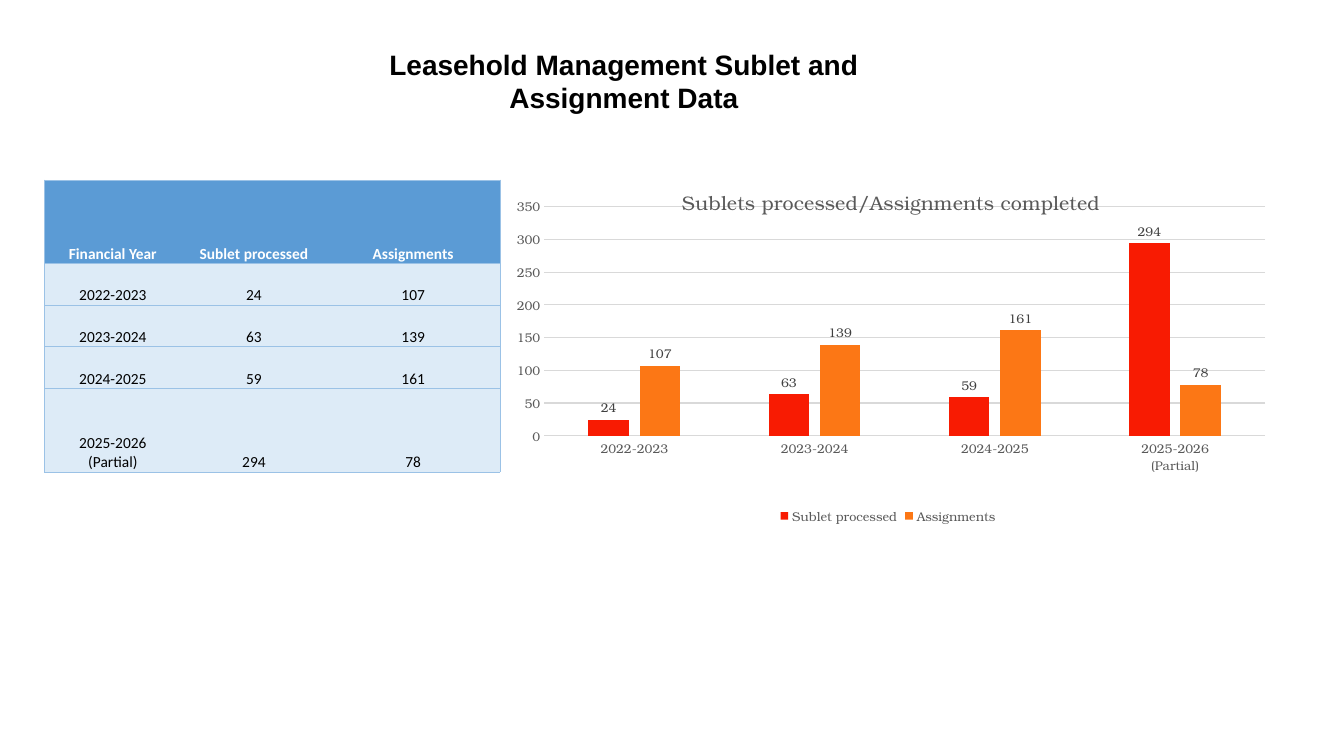
from pptx import Presentation
from pptx.util import Pt
from pptx.dml.color import RGBColor
from pptx.enum.text import PP_ALIGN, MSO_ANCHOR, MSO_AUTO_SIZE
from pptx.enum.chart import XL_CHART_TYPE, XL_LEGEND_POSITION, XL_TICK_MARK, XL_LABEL_POSITION
from pptx.chart.data import CategoryChartData
from pptx.oxml import parse_xml
from pptx.oxml.ns import nsdecls

HUES = {"black": "000000", "white": "FFFFFF", "head": "5B9BD5", "body": "DDEBF7",
        "edge": "9BC2E6", "grid": "D9D9D9", "grey": "595959", "label": "404040",
        "red": "F81B02", "orange": "FC7715"}
FACE = "TeX Gyre Bonum"
YEARS = ["2022-2023", "2023-2024", "2024-2025", "2025-2026\n(Partial)"]
SERIES = [("Sublet processed", [24, 63, 59, 294], "red"),
          ("Assignments", [107, 139, 161, 78], "orange")]


def style(font, name, size, hue, bold=False):
    font.name, font.size, font.bold = name, Pt(size), bold
    font.color.rgb = RGBColor.from_string(HUES[hue])


def layout(x, y, w=None, h=None):
    size = f'<c:w val="{w}"/><c:h val="{h}"/>' if w else ""
    target = '<c:layoutTarget val="inner"/>' if w else ""
    return parse_xml(f'<c:layout {nsdecls("c")}><c:manualLayout>{target}'
                     '<c:xMode val="edge"/><c:yMode val="edge"/>'
                     f'<c:x val="{x}"/><c:y val="{y}"/>{size}'
                     '</c:manualLayout></c:layout>')


deck = Presentation()
deck.slide_width, deck.slide_height = Pt(960), Pt(540)
slide = deck.slides.add_slide(deck.slide_layouts[5])

# Title
title = slide.shapes.title
title.left, title.top, title.width, title.height = Pt(227.5), Pt(30.2), Pt(436.3), Pt(77.8)
frame = title.text_frame
frame.text = "Leasehold Management Sublet and Assignment Data"
frame.word_wrap = True
frame.auto_size = MSO_AUTO_SIZE.NONE
frame.vertical_anchor = MSO_ANCHOR.TOP
frame.paragraphs[0].alignment = PP_ALIGN.CENTER
style(frame.paragraphs[0].runs[0].font, "Arial", 20, "black", True)

# Table
rows = [["Financial Year"] + [name for name, _, _ in SERIES]]
rows += [list(row) for row in zip(YEARS, *(vals for _, vals, _ in SERIES))]
widths = [97.9, 103.7, 123.8]
heights = [59.6, 29.8, 29.8, 29.8, 59.6]
table = slide.shapes.add_table(len(rows), len(widths), Pt(31.7), Pt(128.5),
                               Pt(sum(widths)), Pt(sum(heights))).table
table.horz_banding = False
for col, width in zip(table.columns, widths):
    col.width = Pt(width)
for r, row in enumerate(rows):
    table.rows[r].height = Pt(heights[r])
    for c, value in enumerate(row):
        cell = table.cell(r, c)
        cell.text = str(value).replace("\n", "\v")
        cell.vertical_anchor = MSO_ANCHOR.BOTTOM
        cell.margin_left = cell.margin_right = cell.margin_top = Pt(0.7)
        cell.margin_bottom = 0
        para = cell.text_frame.paragraphs[0]
        para.alignment = PP_ALIGN.CENTER
        for run in para.runs:
            style(run.font, "Calibri", 11, "black" if r else "white", r == 0)
        # Outer frame and row rules only
        shown = {"L": c == 0, "R": c == len(widths) - 1, "T": True, "B": True}
        for side, on in shown.items():
            paint = (f'<a:solidFill><a:srgbClr val="{HUES["edge"]}"/></a:solidFill>'
                     if on else "<a:noFill/>")
            cell._tc.get_or_add_tcPr().append(parse_xml(
                f'<a:ln{side} {nsdecls("a")} w="{Pt(0.5)}">{paint}</a:ln{side}>'))
        cell.fill.solid()
        cell.fill.fore_color.rgb = RGBColor.from_string(HUES["body" if r else "head"])

# Chart
data = CategoryChartData(number_format="0")
data.categories = YEARS
for name, vals, _ in SERIES:
    data.add_series(name, vals)
chart = slide.shapes.add_chart(XL_CHART_TYPE.COLUMN_CLUSTERED, Pt(357.1), Pt(119.5),
                               Pt(554.4), Pt(257.8), data).chart
style(chart.font, FACE, 10, "black")

# Chart title and plot area
chart.has_title = True
head = chart.chart_title
head.text_frame.text = "Sublets processed/Assignments completed"
style(head.text_frame.paragraphs[0].runs[0].font, FACE, 14, "grey")
head.include_in_layout = True
for old in head._element.xpath("c:layout"):
    head._element.remove(old)
head._element.xpath("c:tx")[0].addnext(layout(0.23, 0.045))
area = chart._chartSpace.chart.plotArea
for old in area.xpath("c:layout"):
    area.remove(old)
area.insert(0, layout(0.057, 0.109, 0.929, 0.635))

# Axes and legend
for axis in (chart.category_axis, chart.value_axis):
    axis.major_tick_mark = axis.minor_tick_mark = XL_TICK_MARK.NONE
    style(axis.tick_labels.font, FACE, 9, "grey")
value = chart.value_axis
value.minimum_scale, value.maximum_scale, value.major_unit = 0, 350, 50
value.format.line.fill.background()
value.has_major_gridlines = True
for line in (chart.category_axis.format.line, value.major_gridlines.format.line):
    line.width = Pt(0.75)
    line.color.rgb = RGBColor.from_string(HUES["grid"])
chart.has_legend = True
chart.legend.position = XL_LEGEND_POSITION.BOTTOM
chart.legend.include_in_layout = False
style(chart.legend.font, FACE, 9, "grey")

# Columns and their labels
plot = chart.plots[0]
plot.gap_width, plot.overlap, plot.vary_by_categories = 219, -27, False
for bars, (_, _, hue) in zip(plot.series, SERIES):
    bars.format.fill.solid()
    bars.format.fill.fore_color.rgb = RGBColor.from_string(HUES[hue])
    labels = bars.data_labels
    labels.show_value = True
    labels.position = XL_LABEL_POSITION.OUTSIDE_END
    style(labels.font, FACE, 9, "label")

deck.save("out.pptx")
